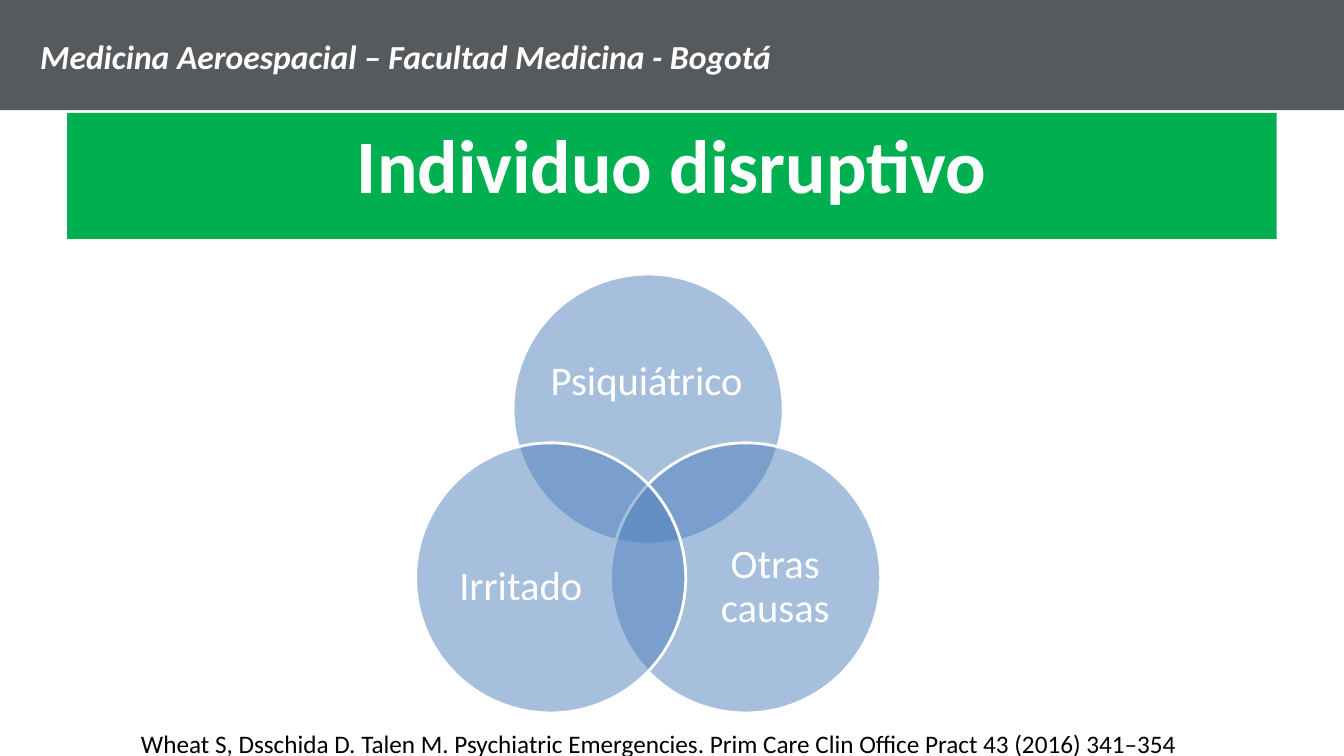
from dataclasses import dataclass
from math import cos, radians, sin

from lxml import etree
from pptx import Presentation
from pptx.dml.color import RGBColor
from pptx.enum.shapes import MSO_SHAPE
from pptx.enum.text import MSO_ANCHOR, PP_ALIGN
from pptx.oxml.ns import qn
from pptx.util import Inches, Pt

RECTANGLE, OVAL = MSO_SHAPE.RECTANGLE, MSO_SHAPE.OVAL
TOP, MIDDLE = MSO_ANCHOR.TOP, MSO_ANCHOR.MIDDLE
LEFT, CENTER = PP_ALIGN.LEFT, PP_ALIGN.CENTER

# Grid of square cells covering the slide
SLIDE_WIDTH, SLIDE_HEIGHT = Inches(13.333), Inches(7.5)
COLUMNS, ROWS = 160, 90


@dataclass(frozen=True)
class Theme:
    font: str = "Calibri"
    white: str = "FFFFFF"
    black: str = "000000"
    band: str = "565A5C"
    title_fill: str = "00B050"
    circle: str = "4F81BD"
    circle_alpha: int = 50
    title_size: int = 54
    label_size: int = 29
    header_size: int = 24
    source_size: int = 18
    outline: int = 2


THEME = Theme()

# Venn geometry in grid cells; label frames are shares of the diameter
VENN_CENTER = (77.16, 62.1)
DIAMETER = 32.16
SPREAD = DIAMETER * 5 / 12
VENN = [
    ("Psiquiátrico", -90, (0.13, 0.175, 0.73, 0.45)),
    ("Otras causas", 30, (0.31, 0.26, 0.6, 0.55)),
    ("Irritado", 150, (0.09, 0.26, 0.6, 0.55)),
]


def place(column, row, width, height):
    """Turn grid cells into slide lengths."""
    across, down = SLIDE_WIDTH / COLUMNS, SLIDE_HEIGHT / ROWS
    return (round(column * across), round(row * down),
            round(width * across), round(height * down))


def write(box, text, size, color=THEME.white, align=LEFT, anchor=TOP,
          bold=False, italic=False, wrap=True, inset=None, spacing=None):
    frame = box.text_frame
    frame.word_wrap = wrap
    frame.vertical_anchor = anchor
    if inset is not None:
        frame.margin_left = frame.margin_right = inset
        frame.margin_top = frame.margin_bottom = inset
    para = frame.paragraphs[0]
    para.alignment = align
    if spacing:
        para.line_spacing = spacing
    span = para.add_run()
    span.text = text
    span.font.name = THEME.font
    span.font.size = Pt(size)
    span.font.bold = bold
    span.font.italic = italic
    span.font.color.rgb = RGBColor.from_string(color)


def add_filled(shapes, kind, cells, color, alpha=None, outline=None):
    shape = shapes.add_shape(kind, *place(*cells))
    shape.shadow.inherit = False
    shape.fill.solid()
    shape.fill.fore_color.rgb = RGBColor.from_string(color)
    if alpha is not None:
        tint = shape.fill._xPr.find(qn("a:solidFill"))[0]
        etree.SubElement(tint, qn("a:alpha")).set("val", str(alpha * 1000))
    if outline:
        shape.line.color.rgb = RGBColor.from_string(THEME.white)
        shape.line.width = Pt(outline)
    else:
        shape.line.fill.background()
    return shape


def add_text(shapes, cells, text, size, **style):
    write(shapes.add_textbox(*place(*cells)), text, size, **style)


def add_venn(page):
    group = page.shapes.add_group_shape()
    for label, angle, (left, top, width, height) in VENN:
        column = VENN_CENTER[0] + SPREAD * cos(radians(angle)) - DIAMETER / 2
        row = VENN_CENTER[1] + SPREAD * sin(radians(angle)) - DIAMETER / 2
        add_filled(group.shapes, OVAL, (column, row, DIAMETER, DIAMETER),
                   THEME.circle, THEME.circle_alpha, THEME.outline)
        cells = (column + left * DIAMETER, row + top * DIAMETER,
                 width * DIAMETER, height * DIAMETER)
        add_text(group.shapes, cells, label, THEME.label_size, align=CENTER,
                 anchor=MIDDLE, inset=0, spacing=0.9)


def main():
    deck = Presentation()
    deck.slide_width, deck.slide_height = SLIDE_WIDTH, SLIDE_HEIGHT
    page = deck.slides.add_slide(deck.slide_layouts[6])

    # Header band and title
    add_filled(page.shapes, RECTANGLE, (0, 0, COLUMNS, 13.1), THEME.band)
    title = add_filled(page.shapes, RECTANGLE, (8, 13.45, 144, 15),
                       THEME.title_fill)
    write(title, "Individuo disruptivo", THEME.title_size, align=CENTER,
          bold=True)

    # Overlapping circles
    add_venn(page)

    # Source and header text
    add_text(page.shapes, (15.6, 86.15, 140.4, 4.8),
             "Wheat S, Dsschida D. Talen M. Psychiatric Emergencies. "
             "Prim Care Clin Office Pract 43 (2016) 341–354",
             THEME.source_size, color=THEME.black)
    add_text(page.shapes, (3.6, 3.7, 90.1, 6),
             "Medicina Aeroespacial – Facultad Medicina - Bogotá",
             THEME.header_size, bold=True, italic=True, wrap=False)

    deck.save("out.pptx")


if __name__ == "__main__":
    main()
